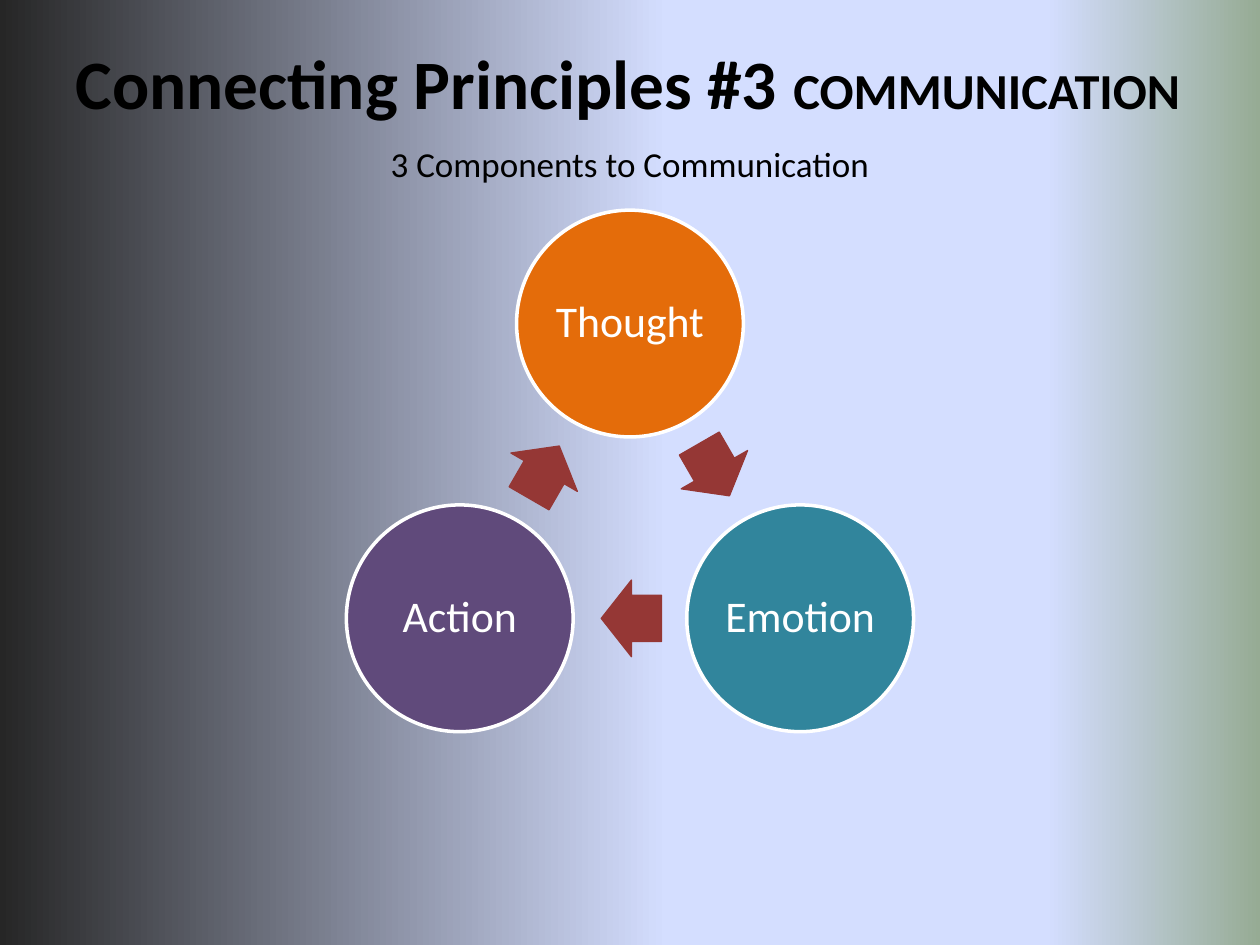
"""Build the slide on the three components of communication as a circular cycle."""
import math
from dataclasses import dataclass

import lxml.etree
import pptx
import pptx.dml.color
import pptx.enum.shapes
import pptx.enum.text
import pptx.oxml.ns
import pptx.util

Pt = pptx.util.Pt
Color = pptx.dml.color.RGBColor.from_string
Align = pptx.enum.text.PP_ALIGN
Anchor = pptx.enum.text.MSO_ANCHOR
Preset = pptx.enum.shapes.MSO_SHAPE


@dataclass(frozen=True)
class Theme:
    font: str = "Calibri"
    dark: str = "000000"
    light: str = "FFFFFF"
    arrow: str = "953735"
    background: tuple = ((0, "262626"), (53, "D4DEFF"), (83, "D4DEFF"), (100, "96AB94"))
    title_size: float = 39.6
    title_small_size: float = 28.8
    subtitle_size: float = 20
    component_size: float = 25


@dataclass(frozen=True)
class Component:
    name: str
    color: str


@dataclass(frozen=True)
class Cycle:
    center_x: float = 360
    center_y: float = 297.2
    radius: float = 112.3
    diameter: float = 129.6
    arrow_length: float = 34.5
    arrow_width: float = 43.8
    arrow_setback: float = 0.8


THEME = Theme()
CYCLE = Cycle()
COMPONENTS = (
    Component("Thought", "E46C0A"),
    Component("Emotion", "31859C"),
    Component("Action", "604A7B"),
)


def paint_background(slide) -> None:
    fill = slide.background.fill
    fill.gradient()
    fill.gradient_angle = 0
    qualify = pptx.oxml.ns.qn
    stops = slide.element.find(".//" + qualify("a:gsLst"))
    for stop in list(stops):
        stops.remove(stop)
    for position, color in THEME.background:
        stop = lxml.etree.SubElement(stops, qualify("a:gs"), pos=str(position * 1000))
        lxml.etree.SubElement(stop, qualify("a:srgbClr"), val=color)


def write_text(shape, *parts: tuple[str, float], color: str = THEME.dark, bold: bool = False,
               align=Align.CENTER, anchor=Anchor.MIDDLE, inset: float | None = None,
               space_before: float = 0, line_spacing: float = 1.0) -> None:
    frame = shape.text_frame
    frame.word_wrap = True
    frame.vertical_anchor = anchor
    if inset is not None:
        frame.margin_left = frame.margin_right = Pt(inset)
        frame.margin_top = frame.margin_bottom = Pt(inset)
    paragraph = frame.paragraphs[0]
    paragraph.alignment = align
    paragraph.space_before = Pt(space_before)
    paragraph.line_spacing = line_spacing
    for text, size in parts:
        run = paragraph.add_run()
        run.text = text
        run.font.name = THEME.font
        run.font.size = Pt(size)
        run.font.bold = bold
        run.font.color.rgb = Color(color)


def add_textbox(slide, left: float, top: float, width: float, height: float):
    return slide.shapes.add_textbox(Pt(left), Pt(top), Pt(width), Pt(height))


def add_centered_shape(slide, preset, center: tuple[float, float], width: float,
                       height: float, fill: str, line: str, line_width: float):
    x, y = center
    shape = slide.shapes.add_shape(
        preset, Pt(x - width / 2), Pt(y - height / 2), Pt(width), Pt(height))
    shape.shadow.inherit = False
    shape.fill.solid()
    shape.fill.fore_color.rgb = Color(fill)
    shape.line.color.rgb = Color(line)
    shape.line.width = Pt(line_width)
    return shape


def component_center(index: int) -> tuple[float, float]:
    angle = math.tau * index / len(COMPONENTS)
    return (CYCLE.center_x + CYCLE.radius * math.sin(angle),
            CYCLE.center_y - CYCLE.radius * math.cos(angle))


def add_component(slide, component: Component, center: tuple[float, float]) -> None:
    circle = add_centered_shape(slide, Preset.OVAL, center, CYCLE.diameter, CYCLE.diameter,
                                component.color, THEME.light, 2)
    write_text(circle, (component.name, THEME.component_size), color=THEME.light,
               inset=2, line_spacing=0.9)


def add_arrow(slide, start: tuple[float, float], end: tuple[float, float]) -> None:
    angle = math.atan2(end[1] - start[1], end[0] - start[0])
    center = ((start[0] + end[0]) / 2 - CYCLE.arrow_setback * math.cos(angle),
              (start[1] + end[1]) / 2 - CYCLE.arrow_setback * math.sin(angle))
    arrow = add_centered_shape(slide, Preset.RIGHT_ARROW, center, CYCLE.arrow_length,
                               CYCLE.arrow_width, THEME.arrow, THEME.arrow, 0.75)
    arrow.adjustments[0] = 0.6
    arrow.adjustments[1] = 0.5
    arrow.rotation = round(math.degrees(angle)) % 360


def main() -> None:
    presentation = pptx.Presentation()
    presentation.slide_width, presentation.slide_height = Pt(720), Pt(540)
    slide = presentation.slides.add_slide(presentation.slide_layouts[6])
    paint_background(slide)
    write_text(add_textbox(slide, 36, 77.8, 648, 48.2),
               ("3 Components to Communication", THEME.subtitle_size),
               anchor=Anchor.TOP, space_before=4)
    write_text(add_textbox(slide, 36, 21.6, 672, 50.4),
               ("Connecting Principles #3 ", THEME.title_size),
               ("COMMUNICATION", THEME.title_small_size), bold=True, align=Align.LEFT)
    for index, component in enumerate(COMPONENTS):
        center = component_center(index)
        add_component(slide, component, center)
        add_arrow(slide, center, component_center(index + 1))
    presentation.save("out.pptx")


if __name__ == "__main__":
    main()
